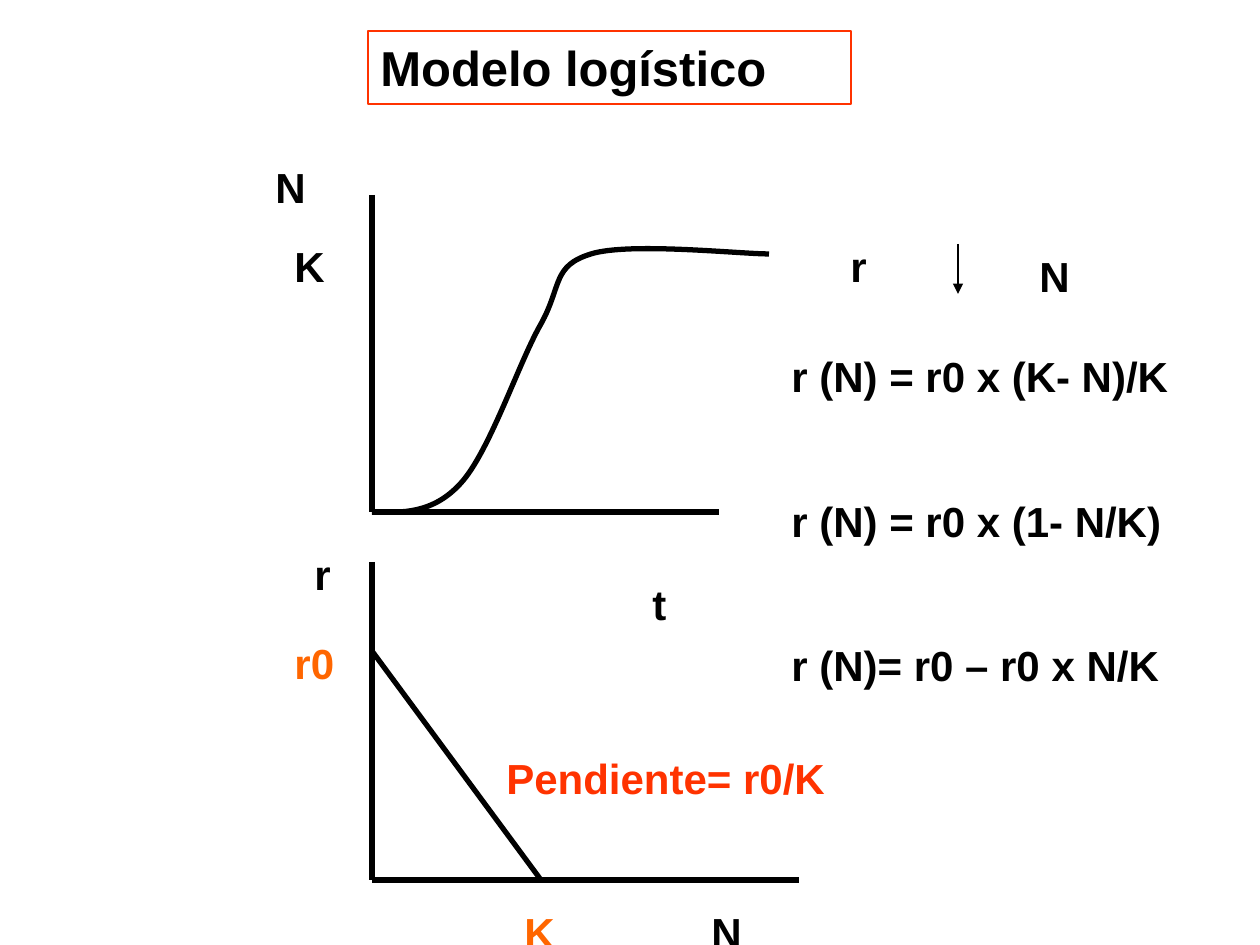
"""Build the logistic growth model slide with its two plots and equations."""
from lxml import etree
from pptx import Presentation, util as u
from pptx.dml.color import RGBColor
from pptx.enum import dml, shapes, text
from pptx.oxml.ns import qn

PX = 914400 / 126
COLORS = {"black": "000000", "white": "FFFFFF", "red": "FF3300", "orange": "FF6600"}
FONT = "Arial"
LABEL_HEIGHT = 63
ORIGIN_X, TIME_Y, DENSITY_Y = 372, 512, 880
CARRYING_X = 541

LINES = [
    ((ORIGIN_X, 195), (ORIGIN_X, TIME_Y)),
    ((ORIGIN_X, TIME_Y), (719, TIME_Y)),
    ((ORIGIN_X, 562), (ORIGIN_X, DENSITY_Y)),
    ((ORIGIN_X, DENSITY_Y), (799, DENSITY_Y)),
    ((ORIGIN_X, 651), (CARRYING_X, DENSITY_Y)),
]
DOWN_ARROW = ((958, 244), (958, 294))
GROWTH_CURVE = [
    (ORIGIN_X, TIME_Y),
    (402, 513), (433, 514), (461, 483),
    (490, 451), (519, 362), (CARRYING_X, 324),
    (562, 286), (552, 266), (591, 254),
    (629, 242), (740, 254), (769, 254),
]
LABELS = [
    ("N", 263, 155, 100, "black"),
    ("K", 282, 234, 49, "black"),
    ("t", 640, 572, 100, "black"),
    ("r", 838, 234, 348, "black"),
    ("N", 1027, 244, 129, "black"),
    ("r", 302, 542, 49, "black"),
    ("r0", 282, 631, 79, "orange"),
    ("Pendiente= r0/K", 494, 746, 378, "red"),
    ("K", 512, 900, 89, "orange"),
    ("N", 699, 900, 129, "black"),
]
TITLE = "Modelo logístico"
EQUATIONS = ["r (N) = r0 x (K- N)/K", "r (N) = r0 x (1- N/K)", "r (N)= r0 – r0 x N/K"]


def emu(*lengths):
    return [round(length * PX) for length in lengths]


def color(name):
    return RGBColor.from_string(COLORS[name])


def style_line(line, width, name="black"):
    line.color.rgb = color(name)
    line.width = u.Pt(width)


def add_line(slide, start, end, width=3):
    connector = slide.shapes.add_connector(
        shapes.MSO_CONNECTOR.STRAIGHT, *emu(*start, *end))
    style_line(connector.line, width)
    etree.SubElement(connector._element.spPr, qn("a:effectLst"))
    return connector


def add_arrow(slide, start, end):
    connector = add_line(slide, start, end, 0.75)
    etree.SubElement(connector.line._get_or_add_ln(), qn("a:tailEnd"), type="triangle")


def add_curve(slide, points):
    start, *controls = [emu(*point) for point in points]
    builder = slide.shapes.build_freeform(*start)
    builder.add_line_segments(controls, close=False)
    curve = builder.convert_to_shape()
    segments = list(curve._element.iter(qn("a:lnTo")))
    for index in range(0, len(segments), 3):
        bezier = etree.Element(qn("a:cubicBezTo"))
        segments[index].addprevious(bezier)
        for segment in segments[index:index + 3]:
            bezier.append(segment[0])
            segment.getparent().remove(segment)
    curve.fill.background()
    curve.shadow.inherit = False
    style_line(curve.line, 3)


def add_text(slide, lines, left, top, width, height=LABEL_HEIGHT,
             name="black", size=24, gap=0):
    box = slide.shapes.add_textbox(*emu(left, top, width, height))
    frame = box.text_frame
    frame.word_wrap = True
    frame.auto_size = text.MSO_AUTO_SIZE.SHAPE_TO_FIT_TEXT
    frame.text = "\n".join(lines)
    for index, paragraph in enumerate(frame.paragraphs):
        paragraph.space_before = u.Pt(gap if index else size / 2)
        font = paragraph.font
        font.name, font.size, font.bold = FONT, u.Pt(size), True
        font.color.rgb = color(name)
    return box


def main():
    presentation = Presentation()
    presentation.slide_width, presentation.slide_height = u.Inches(10), u.Inches(7.5)
    slide = presentation.slides.add_slide(presentation.slide_layouts[6])

    for start, end in LINES:
        add_line(slide, start, end)
    add_curve(slide, GROWTH_CURVE)
    title = add_text(slide, [TITLE], 368, 31, 483, 73, size=28)
    title.fill.solid()
    title.fill.fore_color.rgb = color("white")
    style_line(title.line, 0.75, "red")
    for label, left, top, width, name in LABELS:
        add_text(slide, [label], left, top, width, name=name)
    add_arrow(slide, *DOWN_ARROW)
    add_text(slide, EQUATIONS, 779, 344, 481, 365, gap=54)
    presentation.save("out.pptx")


if __name__ == "__main__":
    main()
